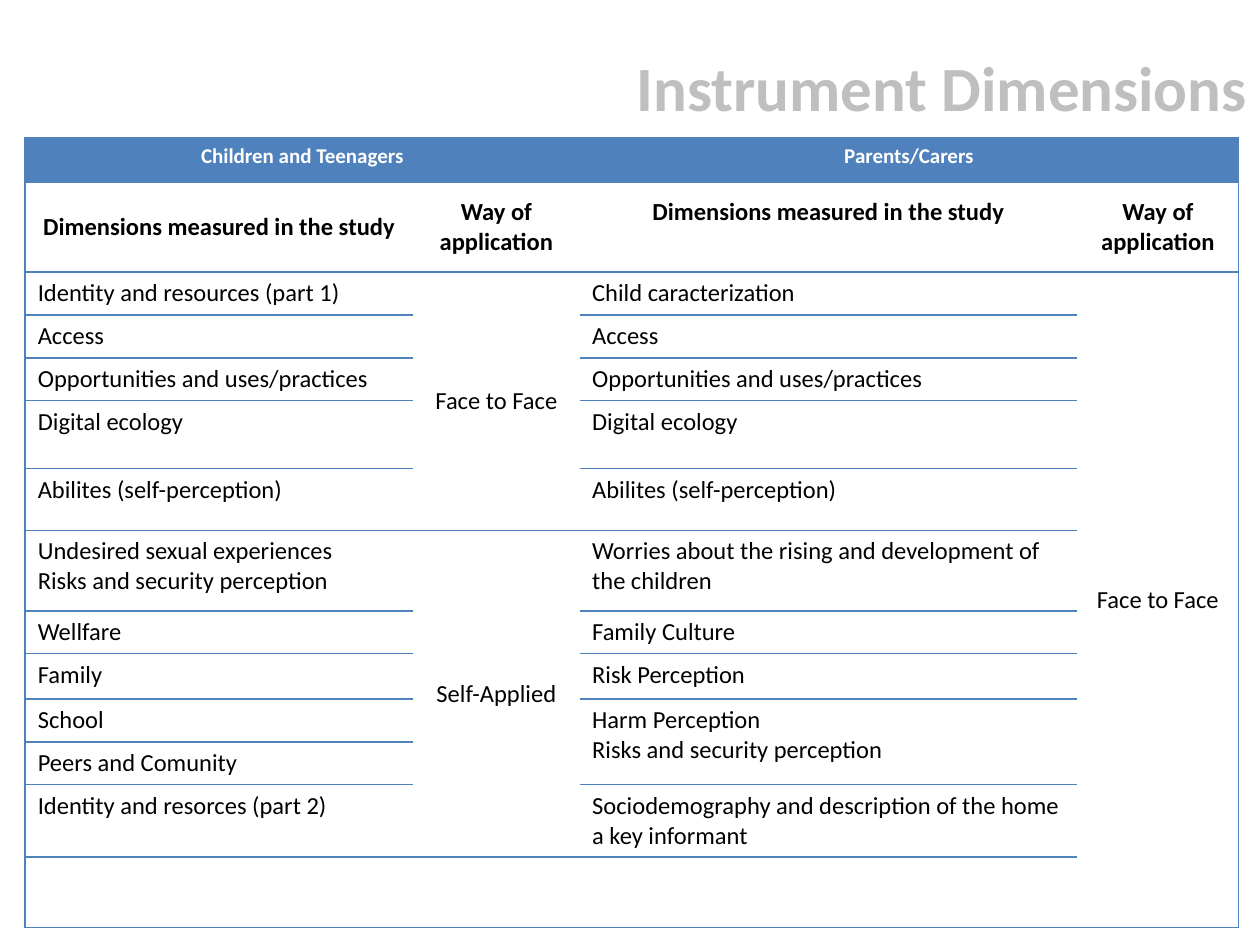
from lxml import etree
from pptx import Presentation
from pptx import util as u
from pptx.dml.color import RGBColor
from pptx.enum import text
from pptx.oxml.ns import qn

COLORS = {"blue": "4F81BD", "white": "FFFFFF", "black": "000000", "gray": "BFBFBF"}
FONT = "Calibri"
PLAIN_STYLE = "{2D5ABB26-0587-4C30-8999-92F81FD0307C}"
CENTER, LEFT, RIGHT = text.PP_ALIGN.CENTER, text.PP_ALIGN.LEFT, text.PP_ALIGN.RIGHT
MIDDLE, TOP = text.MSO_ANCHOR.MIDDLE, text.MSO_ANCHOR.TOP

COLUMNS = [3.08, 1.32, 3.95, 1.28]
ROWS = [0.36, 0.71, 0.34, 0.34, 0.34, 0.54, 0.49, 0.64, 0.34, 0.36, 0.34, 0.34, 0.57, 0.56]
MERGES = [((0, 0), (0, 1)), ((0, 2), (0, 3)), ((2, 1), (6, 1)),
          ((2, 3), (13, 3)), ((7, 1), (12, 1)), ((10, 2), (11, 2))]
CONTENT = [
    ["Children and Teenagers", "", "Parents/Carers", ""],
    ["Dimensions measured in the study", "Way of application"] * 2,
    ["Identity and resources (part 1)", "Face to Face", "Child caracterization", "Face to Face"],
    ["Access", "", "Access", ""],
    ["Opportunities and uses/practices", "", "Opportunities and uses/practices", ""],
    ["Digital ecology", "", "Digital ecology", ""],
    ["Abilites (self-perception)", "", "Abilites (self-perception)", ""],
    ["Undesired sexual experiences\nRisks and security perception", "Self-Applied",
     "Worries about the rising and development of the children", ""],
    ["Wellfare", "", "Family Culture", ""],
    ["Family", "", "Risk Perception", ""],
    ["School", "", "Harm Perception\nRisks and security perception", ""],
    ["Peers and Comunity", "", "", ""],
    ["Identity and resorces (part 2)", "",
     "Sociodemography and description of the home a key informant", ""],
    ["", "", "", ""],
]


def write_text(frame, words, size=14, color="black", bold=False, align=LEFT):
    frame.text = words
    for para in frame.paragraphs:
        para.alignment = align
        for span in para.runs:
            span.font.name = FONT
            span.font.size = u.Pt(size)
            span.font.bold = bold
            span.font.color.rgb = RGBColor.from_string(COLORS[color])


def draw_borders(cell, edges):
    properties = cell._tc.get_or_add_tcPr()
    for index, edge in enumerate("LRTB"):
        line = etree.Element(qn("a:ln" + edge), w=str(u.Pt(1)))
        if edge in edges:
            fill = etree.SubElement(line, qn("a:solidFill"))
            etree.SubElement(fill, qn("a:srgbClr"), val=COLORS["blue"])
        else:
            etree.SubElement(line, qn("a:noFill"))
        properties.insert(index, line)


def add_title(page, left, top, width, height):
    title = page.shapes.title
    title.left, title.top, title.width, title.height = map(u.Inches, (left, top, width, height))
    title.text_frame.vertical_anchor = MIDDLE
    write_text(title.text_frame, "Instrument Dimensions", size=36, color="gray",
               bold=True, align=RIGHT)


def format_cell(cell, row, column):
    banner = row == 0
    centered = row < 2 or column in (1, 3)
    cell.fill.solid()
    cell.fill.fore_color.rgb = RGBColor.from_string(COLORS["blue" if banner else "white"])
    cell.vertical_anchor = MIDDLE if centered and not banner else TOP
    write_text(cell.text_frame, CONTENT[row][column], size=12 if banner else 14,
               color="white" if banner else "black", bold=row < 2,
               align=CENTER if centered else LEFT)
    edges = "TB"
    if column == 0:
        edges += "L"
    if column + cell.span_width == len(COLUMNS) or column == len(COLUMNS) - 1:
        edges += "R"
    draw_borders(cell, edges)


def add_dimensions_table(page, left, top):
    box = [u.Inches(value) for value in (left, top, sum(COLUMNS), sum(ROWS))]
    table = page.shapes.add_table(len(ROWS), len(COLUMNS), *box).table
    table._tbl.tblPr.find(qn("a:tableStyleId")).text = PLAIN_STYLE
    table.horz_banding = False
    for column, width in zip(table.columns, COLUMNS):
        column.width = u.Inches(width)
    for row, height in zip(table.rows, ROWS):
        row.height = u.Inches(height)
    for first, last in MERGES:
        table.cell(*first).merge(table.cell(*last))
    for row in range(len(ROWS)):
        for column in range(len(COLUMNS)):
            cell = table.cell(row, column)
            if not cell.is_spanned:
                format_cell(cell, row, column)
    table.cell(1, 2).margin_bottom = u.Inches(0.29)


def main():
    deck = Presentation()
    deck.slide_width, deck.slide_height = u.Inches(10), u.Inches(7.5)
    page = deck.slides.add_slide(deck.slide_layouts[5])
    add_title(page, 1, 0.06, 9, 1.25)
    add_dimensions_table(page, 0.2, 1.09)
    deck.save("out.pptx")


if __name__ == "__main__":
    main()
